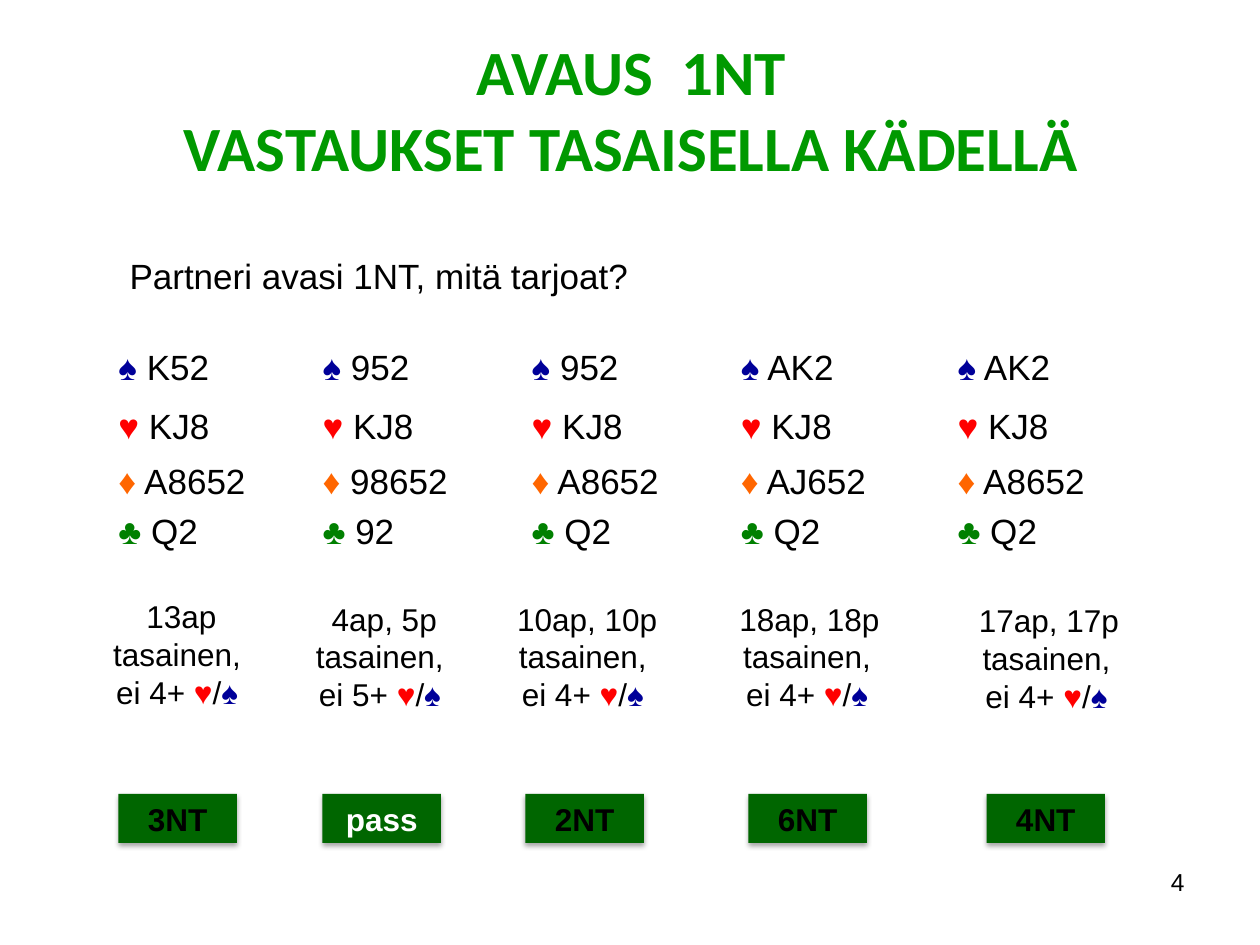
from dataclasses import dataclass
from itertools import groupby

from lxml.etree import SubElement
from pptx import Presentation
from pptx.dml.color import RGBColor
from pptx.enum.shapes import MSO_SHAPE
from pptx.enum.text import MSO_ANCHOR, MSO_AUTO_SIZE, PP_ALIGN as Align
from pptx.oxml.ns import qn
from pptx.util import Inches, Pt


@dataclass(frozen=True)
class Theme:
    body_font: str = "Arial"
    title_font: str = "Calibri"
    ink: str = "000000"
    title: str = "009900"
    bid_fill: str = "006600"
    bid_light: str = "FFFFFF"
    spade: str = "000099"
    heart: str = "FF0000"
    diamond: str = "FF6600"
    club: str = "008000"
    title_size: int = 36
    card_size: int = 20
    note_size: int = 18
    page_size: int = 14


@dataclass(frozen=True)
class Hand:
    cards: tuple
    points: str
    shape: str
    bid: str
    note_at: tuple
    bid_left: float
    points_align: Align = Align.CENTER
    bid_color: str = Theme.ink


THEME = Theme()
SUITS = {"♠": THEME.spade, "♥": THEME.heart, "♦": THEME.diamond, "♣": THEME.club}
COLUMN_WIDTHS = (1.62, 1.66, 1.66, 1.72, 1.69)
ROW_HEIGHTS = (0.47, 0.43, 0.4, 0.4)
HANDS = (
    Hand(("K52", "KJ8", "A8652", "Q2"), "13ap", "ei 4+ ♥/♠ ", "3NT", (0.77, 4.69), 0.94),
    Hand(("952", "KJ8", "98652", "92"), "4ap, 5p", "ei 5+ ♥/♠ ", "pass", (2.38, 4.71), 2.56,
         bid_color=THEME.bid_light),
    Hand(("952", "KJ8", "A8652", "Q2"), "10ap, 10p", "ei 4+ ♥/♠ ", "2NT", (3.99, 4.71), 4.17),
    Hand(("AK2", "KJ8", "AJ652", "Q2"), "18ap, 18p", "ei 4+ ♥/♠ ", "6NT", (5.77, 4.71), 5.94,
         points_align=Align.LEFT),
    Hand(("AK2", "KJ8", "A8652", "Q2"), "17ap, 17p", "ei 4+ ♥/♠ ", "4NT", (7.67, 4.72), 7.83,
         points_align=Align.LEFT),
)


def write(paragraph, text, size, color=THEME.ink, align=Align.LEFT,
          font=THEME.body_font, bold=False):
    """Fill a paragraph, giving every suit symbol its own colour."""
    paragraph.alignment = align
    for number, line in enumerate(text.split("\v")):
        if number:
            paragraph.add_line_break()
        for run_color, letters in groupby(line, lambda letter: SUITS.get(letter, color)):
            run = paragraph.add_run()
            run.text = "".join(letters)
            run.font.name = font
            run.font.size = Pt(size)
            run.font.bold = bold
            run.font.color.rgb = RGBColor.from_string(run_color)


def add_text(slide, left, top, width, height):
    frame = slide.shapes.add_textbox(
        Inches(left), Inches(top), Inches(width), Inches(height)).text_frame
    frame.word_wrap = True
    return frame


def add_hands_table(slide):
    table = slide.shapes.add_table(
        len(SUITS), len(HANDS), Inches(0.84), Inches(2.73),
        Inches(sum(COLUMN_WIDTHS)), Inches(sum(ROW_HEIGHTS))).table
    table.first_row = table.horz_banding = False
    for column, width in zip(table.columns, COLUMN_WIDTHS):
        column.width = Inches(width)
    for row, (suit, height) in enumerate(zip(SUITS, ROW_HEIGHTS)):
        table.rows[row].height = Inches(height)
        for column, hand in enumerate(HANDS):
            cell = table.cell(row, column)
            cell.fill.background()
            cell.margin_top = cell.margin_bottom = Inches(0.04)
            write(cell.text_frame.paragraphs[0], f"{suit} {hand.cards[row]}",
                  THEME.card_size, align=Align.JUSTIFY)


def add_note(slide, hand):
    frame = add_text(slide, *hand.note_at, 1.34, 1.01)
    write(frame.paragraphs[0], hand.points, THEME.note_size, align=hand.points_align)
    for line in ("tasainen, ", hand.shape):
        write(frame.add_paragraph(), line, THEME.note_size, align=Align.CENTER)


def add_drop_shadow(shape):
    effects = SubElement(shape.fill._xPr, qn("a:effectLst"))
    shadow = SubElement(effects, qn("a:outerShdw"), blurRad=str(Pt(3.1)),
                        dist=str(Pt(1.8)), dir="5400000", rotWithShape="0")
    color = SubElement(shadow, qn("a:srgbClr"), val=THEME.ink)
    SubElement(color, qn("a:alpha"), val="35000")


def add_bid(slide, hand):
    box = slide.shapes.add_shape(
        MSO_SHAPE.RECTANGLE, Inches(hand.bid_left), Inches(6.3), Inches(0.94), Inches(0.39))
    box.fill.solid()
    box.fill.fore_color.rgb = RGBColor.from_string(THEME.bid_fill)
    box.line.fill.background()
    add_drop_shadow(box)
    frame = box.text_frame
    frame.vertical_anchor = MSO_ANCHOR.TOP
    frame.auto_size = MSO_AUTO_SIZE.SHAPE_TO_FIT_TEXT
    write(frame.paragraphs[0], hand.bid, THEME.note_size, hand.bid_color, Align.CENTER, bold=True)


def main():
    deck = Presentation()
    deck.slide_width, deck.slide_height = Inches(10), Inches(7.5)
    slide = deck.slides.add_slide(deck.slide_layouts[6])

    add_hands_table(slide)
    question = add_text(slide, 0.93, 1.97, 4.33, 0.44)
    write(question.paragraphs[0], "Partneri avasi 1NT, mitä tarjoat?", THEME.card_size)
    for hand in HANDS:
        add_bid(slide, hand)
        add_note(slide, hand)
    title = add_text(slide, 0.12, 0.21, 9.78, 1.31)
    write(title.paragraphs[0], "AVAUS  1NT\vVASTAUKSET TASAISELLA KÄDELLÄ",
          THEME.title_size, THEME.title, Align.CENTER, THEME.title_font, bold=True)
    page = add_text(slide, 7.17, 6.83, 2.33, 0.52)
    write(page.paragraphs[0], "4", THEME.page_size, align=Align.RIGHT)

    deck.save("out.pptx")


if __name__ == "__main__":
    main()
